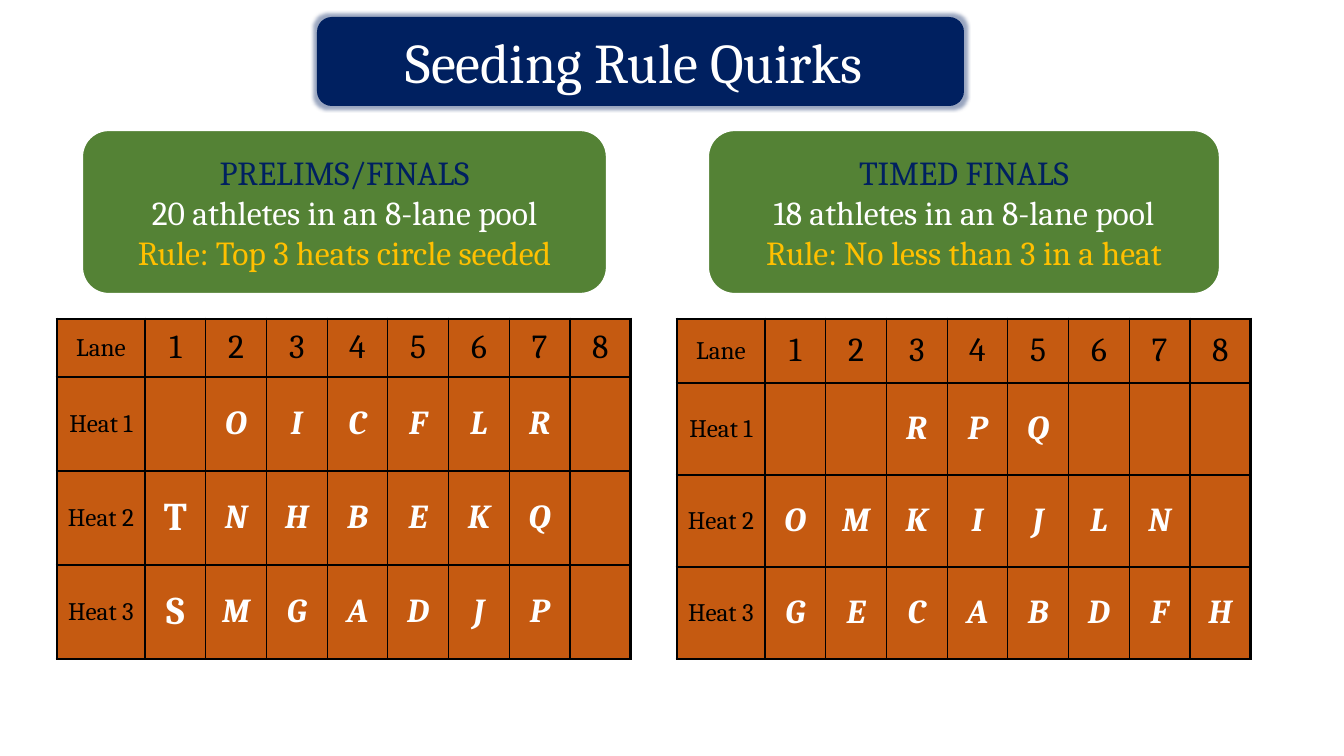
from lxml import etree
from pptx import Presentation, util as u
from pptx.dml.color import RGBColor
from pptx.enum import shapes, text
from pptx.oxml.ns import qn

SCALE = 914400 / 100.8
NAVY, WHITE, GOLD, BLACK = "002060", "FFFFFF", "FFC000", "000000"
GREEN, RUST = "548235", "C55A11"


def px(n):
    return u.Emu(round(n * SCALE))


def rgb(code):
    return RGBColor.from_string(code)


def paint(item, code):
    item.fill.solid()
    item.fill.fore_color.rgb = rgb(code)


def tint(node, code):
    """Append an sRGB colour element to node and return it."""
    return etree.SubElement(node, qn("a:srgbClr"), val=code)


def write(para, words, size=24, color=WHITE, bold=False, italic=False):
    para.alignment = text.PP_ALIGN.CENTER
    run = para.add_run()
    run.text = words
    font = run.font
    font.name, font.size = "Cambria", u.Pt(size)
    font.bold, font.italic = bold, italic
    font.color.rgb = rgb(color)


def edge(cell, side, width):
    line = etree.SubElement(cell._tc.get_or_add_tcPr(), qn("a:ln" + side),
                            w=str(u.Pt(width)))
    tint(etree.SubElement(line, qn("a:solidFill")), BLACK)


class Deck:
    def __init__(self):
        self.prs = Presentation()
        self.prs.slide_width, self.prs.slide_height = px(1344), px(756)
        self.slide = self.prs.slides.add_slide(self.prs.slide_layouts[6])

    def box(self, spot, fill, lines, line=None, size=24):
        """Draw a rounded box; lines holds (words, colour) pairs."""
        shape = self.slide.shapes.add_shape(
            shapes.MSO_SHAPE.ROUNDED_RECTANGLE, *map(px, spot))
        shape.shadow.inherit = False
        paint(shape, fill)
        if line:
            shape.line.color.rgb = rgb(line)
            shape.line.width = u.Pt(3)
        else:
            shape.line.fill.background()
        frame = shape.text_frame
        frame.word_wrap = True
        frame.vertical_anchor = text.MSO_ANCHOR.MIDDLE
        for i, (words, color) in enumerate(lines):
            para = frame.add_paragraph() if i else frame.paragraphs[0]
            write(para, words, size, color)
        return shape

    def glow(self, shape, color, radius):
        effects = shape._element.spPr.find(qn("a:effectLst"))
        halo = etree.SubElement(effects, qn("a:glow"), rad=str(px(radius)))
        etree.SubElement(tint(halo, color), qn("a:alpha"), val="40000")

    def heats(self, left, head, heats, large=""):
        """Draw a lane table; each heat is one letter per lane, a space if empty."""
        top, wide, high, first = 319, 574, 340, 88
        rows = ["12345678"] + heats
        last, lanes = len(heats), len(rows[0])
        table = self.slide.shapes.add_table(
            last + 1, lanes + 1, px(left), px(top), px(wide), px(high)).table
        for c, col in enumerate(table.columns):
            col.width = px((wide - first) / lanes if c else first)
        for r, row in enumerate(table.rows):
            row.height = px((high - head) / last if r else head)
            names = [f"Heat {r}" if r else "Lane", *rows[r]]
            for c, name in enumerate(names):
                cell = table.cell(r, c)
                cell.vertical_anchor = text.MSO_ANCHOR.MIDDLE
                outer = {"L": c == 0, "R": c == lanes, "T": r == 0, "B": r == last}
                for side, thick in outer.items():
                    edge(cell, side, 2.25 if thick else 1)
                paint(cell, RUST)
                para = cell.text_frame.paragraphs[0]
                if c == 0:
                    write(para, name, 18, BLACK)
                elif r == 0:
                    write(para, name, 24, BLACK)
                elif name != " ":
                    big = name in large
                    write(para, name, 28 if big else 24, bold=True, italic=not big)


def main():
    deck = Deck()
    title = deck.box((317, 17, 647, 89), NAVY,
                     [("Seeding Rule Quirks ", WHITE)], size=40)
    deck.glow(title, NAVY, 7)
    deck.heats(677, 64, ["  RPQ   ", "OMKIJLN ", "GECABDFH"])
    deck.box((707, 129, 514, 166), GREEN,
             [("TIMED FINALS", NAVY),
              ("18 athletes in an 8-lane pool", WHITE),
              ("Rule: No less than 3 in a heat", GOLD)], line=WHITE)
    deck.box((81, 129, 527, 166), GREEN,
             [("PRELIMS/FINALS", NAVY),
              ("20 athletes in an 8-lane pool", WHITE),
              ("Rule: Top 3 heats circle seeded", GOLD)], line=WHITE)
    deck.heats(57, 58, [" OICFLR ", "TNHBEKQ ", "SMGADJP "], large="TS")
    deck.prs.save("out.pptx")


if __name__ == "__main__":
    main()
